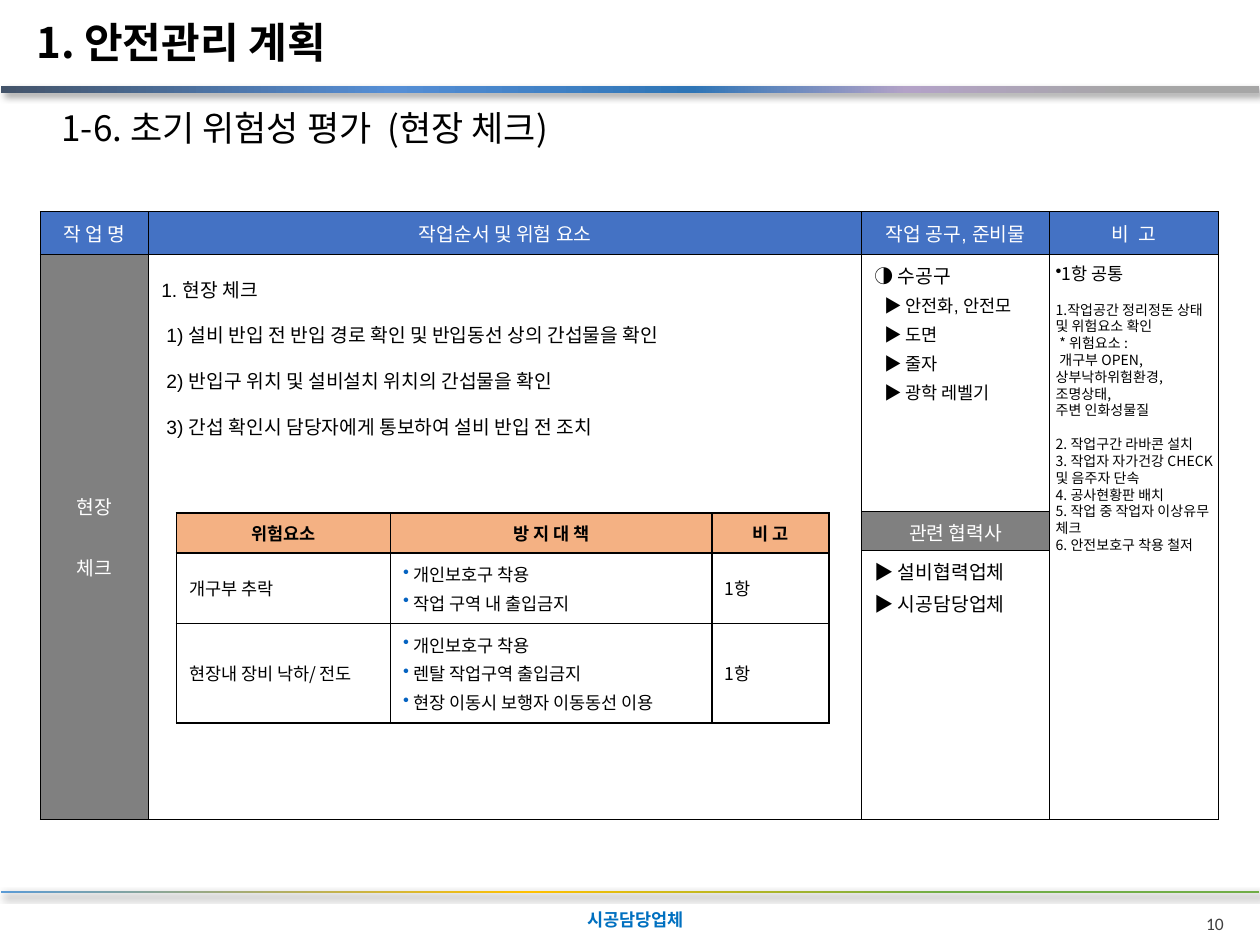
from lxml import etree
from pptx import Presentation
from pptx.dml.color import RGBColor
from pptx.enum import shapes, text
from pptx.oxml.ns import qn
from pptx.util import Inches, Pt

BLACK, WHITE = RGBColor(0, 0, 0), RGBColor(255, 255, 255)
BLUE, GRAY, ORANGE = RGBColor(0x44, 0x72, 0xC4), RGBColor(0x80, 0x80, 0x80), RGBColor(0xF4, 0xB1, 0x83)
FOOTER_BLUE, DARK_GRAY = RGBColor(0, 0x70, 0xC0), RGBColor(0x40, 0x40, 0x40)
BULLET_BLUE = RGBColor(0x05, 0x63, 0xC1)
KOREAN = "Noto Sans CJK KR"
CENTER, RIGHT = text.PP_ALIGN.CENTER, text.PP_ALIGN.RIGHT
TOP, MIDDLE = text.MSO_ANCHOR.TOP, text.MSO_ANCHOR.MIDDLE

# (left, top, width, height), gradient stops as (percent, colour)
BARS = [
    ((0.01, 0.68, 9.98, 0.06),
     [(0, "44546A"), (31, "558ED5"), (55, "2E75B6"), (72, "B3A2C7"), (90, "A6A6A6")]),
    ((0.01, 7.07, 9.98, 0.02), [(0, "5B9BD5"), (42, "FFC000"), (75, "70AD47")]),
]

# Paragraphs are (text, format) pairs
TITLE = [("1. 안전관리 계획", dict(size=24, bold=True))]
SUBTITLE = [("1-6. 초기 위험성 평가  (현장 체크)", dict(size=20))]
FOOTER = [("시공담당업체", dict(bold=True, color=FOOTER_BLUE))]
PAGE_NUMBER = [("10", dict(name="Calibri", color=DARK_GRAY, alignment=RIGHT))]

NOTE = dict(size=8, line_spacing=Pt(9.6))
NOTE_GAP = dict(NOTE, space_before=Pt(9.6))
NOTE_INDENT = dict(NOTE, indent=0.03)
NOTES = [
    ("1항 공통", dict(bullet=BLACK)),
    ("1.작업공간 정리정돈 상태 및 위험요소 확인", NOTE_GAP),
    ("* 위험요소 :", NOTE_INDENT),
    ("개구부 OPEN, 상부낙하위험환경, 조명상태,", NOTE_INDENT),
    ("주변 인화성물질", NOTE),
    ("2. 작업구간 라바콘 설치", NOTE_GAP),
    ("3. 작업자 자가건강 CHECK 및 음주자 단속", NOTE),
    ("4. 공사현황판 배치", NOTE),
    ("5. 작업 중 작업자 이상유무 체크", NOTE),
    ("6. 안전보호구 착용 철저", NOTE),
]

ITEM = dict(name="Arial", size=11, space_before=Pt(2.2))
HEADING = dict(ITEM, color=WHITE, alignment=CENTER)
STEP = dict(ITEM, line_spacing=1.5)
SUBSTEP = dict(STEP, indent=0.04)
TOOL = dict(ITEM, size=10, indent=0.08)
RISK = dict(space_before=Pt(2))
RISK_HEADING = dict(RISK, bold=True, alignment=CENTER)
MEASURE = dict(RISK, bullet=BULLET_BLUE, margin=0.08, indent=-0.08)


def styled(lines, style):
    return [(line, style) for line in lines]


# Cells are (row, column): (paragraphs, fill, anchor)
WORK_COLUMNS, WORK_ROWS = [0.86, 5.66, 1.49, 1.34], [0.34, 2.04, 0.31, 2.13]
WORK_HEADERS = ["작 업 명", "작업순서 및 위험 요소", "작업 공구, 준비물", "비  고"]
WORK_CELLS = {(0, i): (styled([name], HEADING), BLUE, MIDDLE) for i, name in enumerate(WORK_HEADERS)}
WORK_CELLS.update({
    (1, 0): ([("현장", HEADING), ("체크", dict(HEADING, space_before=Pt(19)))], GRAY, MIDDLE),
    (1, 1): ([("1. 현장 체크", STEP)] + styled([
        "1) 설비 반입 전 반입 경로 확인 및 반입동선 상의 간섭물을 확인",
        "2) 반입구 위치 및 설비설치 위치의 간섭물을 확인",
        "3) 간섭 확인시 담당자에게 통보하여 설비 반입 전 조치"], SUBSTEP), None, TOP),
    (1, 2): ([("◑ 수공구", ITEM)] + styled(
        ["▶ 안전화, 안전모", "▶ 도면", "▶ 줄자", "▶ 광학 레벨기"], TOOL), None, TOP),
    (2, 2): (styled(["관련 협력사"], HEADING), GRAY, TOP),
    (3, 2): (styled(["▶ 설비협력업체", "▶ 시공담당업체"], ITEM), None, TOP),
})

RISK_COLUMNS, RISK_ROWS = [1.7, 2.55, 0.93], [0.32, 0.56, 0.79]
RISK_HEADERS = ["위험요소", "방 지 대 책", "비 고"]
RISKS = [
    ("개구부 추락", ["개인보호구 착용", "작업 구역 내 출입금지"], "1항"),
    ("현장내 장비 낙하/ 전도",
     ["개인보호구 착용", "렌탈 작업구역 출입금지", "현장 이동시 보행자 이동동선 이용"], "1항"),
]
RISK_CELLS = {(0, i): (styled([name], RISK_HEADING), ORANGE, MIDDLE) for i, name in enumerate(RISK_HEADERS)}
for row, (risk, measures, remark) in enumerate(RISKS, 1):
    for column, paragraphs in enumerate([styled([risk], RISK), styled(measures, MEASURE),
                                         styled([remark], RISK)]):
        RISK_CELLS[row, column] = (paragraphs, None, MIDDLE)


def add_xml(parent, tag, **attributes):
    return etree.SubElement(parent, qn(tag), {key: str(value) for key, value in attributes.items()})


def write(frame, paragraphs):
    for i, (line, style) in enumerate(paragraphs):
        style = dict(dict(name=KOREAN, size=10, color=BLACK, bold=False), **style)
        paragraph = frame.paragraphs[0] if i == 0 else frame.add_paragraph()
        properties = paragraph._p.get_or_add_pPr()
        properties.set("marL", str(Inches(style.get("margin", 0))))
        properties.set("indent", str(Inches(style.get("indent", 0))))
        if "bullet" in style:
            add_xml(add_xml(properties, "a:buClr"), "a:srgbClr", val=style["bullet"])
            add_xml(properties, "a:buChar", char="•")
        for key in ("alignment", "line_spacing", "space_before"):
            if key in style and (i or key != "space_before"):
                setattr(paragraph, key, style[key])
        run = paragraph.add_run()
        run.text = line
        run.font.size = Pt(style["size"])
        run.font.bold = style["bold"]
        run.font.color.rgb = style["color"]
        run.font.name = style["name"]
        add_xml(run._r.get_or_add_rPr(), "a:ea", typeface=KOREAN)


def add_text(slide, box, paragraphs, anchor=TOP, wrap=True, insets=(0.1, 0.05, 0.1, 0.05)):
    frame = slide.shapes.add_textbox(*map(Inches, box)).text_frame
    frame.word_wrap, frame.vertical_anchor = wrap, anchor
    for side, inset in zip(("left", "top", "right", "bottom"), insets):
        setattr(frame, f"margin_{side}", Inches(inset))
    write(frame, paragraphs)


def add_bar(slide, box, stops):
    bar = slide.shapes.add_shape(shapes.MSO_SHAPE.RECTANGLE, *map(Inches, box))
    bar.line.fill.background()
    bar.fill.gradient()
    bar.fill.gradient_angle = 0
    bar.shadow.inherit = False
    properties = bar._element.spPr
    stop_list = properties.find(".//" + qn("a:gsLst"))
    for stop in list(stop_list):
        stop_list.remove(stop)
    for percent, color in stops:
        add_xml(add_xml(stop_list, "a:gs", pos=percent * 1000), "a:srgbClr", val=color)
    shadow = add_xml(properties.find(qn("a:effectLst")), "a:outerShdw", blurRad=Pt(4), dist=Pt(3),
                     dir=45 * 60000, algn="tl", rotWithShape=0)
    add_xml(add_xml(shadow, "a:srgbClr", val=BLACK), "a:alpha", val=40000)


def set_borders(cell, width):
    properties = cell._tc.get_or_add_tcPr()
    for i, side in enumerate(("a:lnL", "a:lnR", "a:lnT", "a:lnB")):
        line = add_xml(properties, side, w=Pt(width))
        add_xml(add_xml(line, "a:solidFill"), "a:srgbClr", val=BLACK)
        properties.insert(i, line)


def add_grid(slide, left, top, columns, rows, cells, border, merged=()):
    table = slide.shapes.add_table(len(rows), len(columns), Inches(left), Inches(top),
                                   Inches(sum(columns)), Inches(sum(rows))).table
    table.first_row = table.horz_banding = False
    for column, width in zip(table.columns, columns):
        column.width = Inches(width)
    for row, height in zip(table.rows, rows):
        row.height = Inches(height)
    for column in merged:
        table.cell(1, column).merge(table.cell(len(rows) - 1, column))
    for r in range(len(rows)):
        for c in range(len(columns)):
            cell = table.cell(r, c)
            paragraphs, fill, anchor = cells.get((r, c), ([], None, TOP))
            cell.vertical_anchor = anchor
            if fill is None:
                cell.fill.background()
            else:
                cell.fill.solid()
                cell.fill.fore_color.rgb = fill
            set_borders(cell, border)
            write(cell.text_frame, paragraphs)


def main():
    presentation = Presentation()
    presentation.slide_width, presentation.slide_height = Inches(10), Inches(7.5)
    slide = presentation.slides.add_slide(presentation.slide_layouts[6])
    add_text(slide, (4.63, 7.14, 2.18, 0.32), FOOTER, MIDDLE, insets=[0.03] * 4)
    for box, stops in BARS:
        add_bar(slide, box, stops)
    add_grid(slide, 0.32, 1.68, WORK_COLUMNS, WORK_ROWS, WORK_CELLS, 0.5, merged=(0, 1, 3))
    add_grid(slide, 1.4, 4.07, RISK_COLUMNS, RISK_ROWS, RISK_CELLS, 1)
    add_text(slide, (8.28, 2.02, 1.48, 2.52), NOTES, MIDDLE, insets=(0.1, 0.05, 0.1, 0.13))
    add_text(slide, (0.19, 0, 3.68, 0.67), TITLE, MIDDLE, wrap=False)
    add_text(slide, (8.54, 7.2, 1.27, 0.21), PAGE_NUMBER)
    add_text(slide, (0.39, 0.8, 4.56, 0.44), SUBTITLE, wrap=False)
    presentation.save("out.pptx")


if __name__ == "__main__":
    main()
